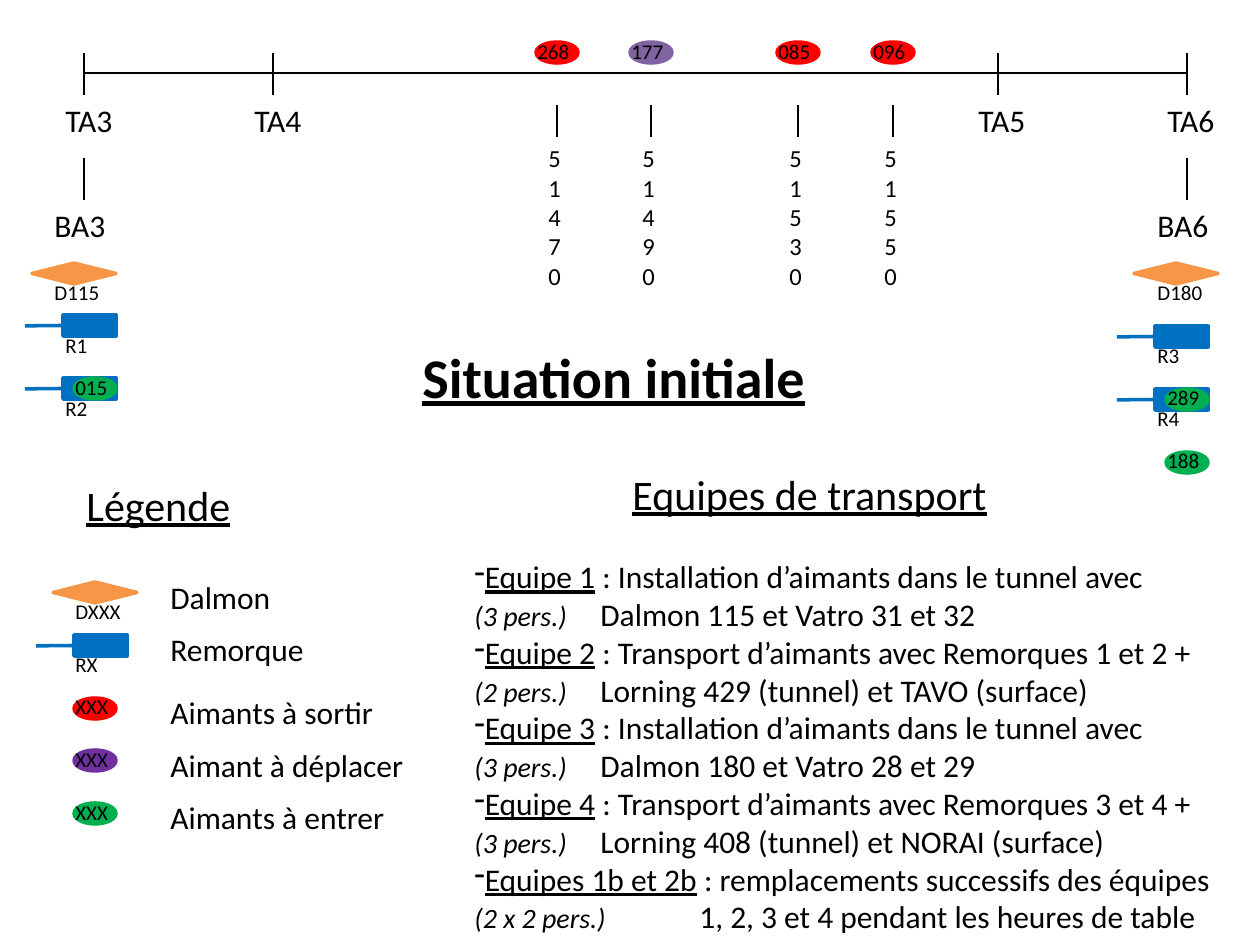
from lxml.etree import SubElement
from pptx import Presentation
from pptx.dml.color import RGBColor
from pptx.enum.shapes import MSO_CONNECTOR, MSO_SHAPE
from pptx.enum.text import MSO_AUTO_SIZE
from pptx.oxml.ns import qn
from pptx.util import Emu, Pt

SCALE = 914400 / 126
COLORS = {
    "black": "000000",
    "red": "FF0000",
    "green": "00B050",
    "violet": "7030A0",
    "mauve": "8064A2",
    "blue": "0070C0",
    "orange": "F79646",
}
LABEL_HEIGHTS = {12: 38, 14: 161, 18: 50, 24: 63, 32: 81}
SYMBOLS = {
    "magnet": (MSO_SHAPE.OVAL, 42),
    "tractor": (MSO_SHAPE.FLOWCHART_DECISION, 84),
    "trailer": (MSO_SHAPE.LINE_CALLOUT_1, 53),
}

deck = Presentation()
deck.slide_width = Emu(round(1260 * SCALE))
deck.slide_height = Emu(round(945 * SCALE))
page = deck.slides.add_slide(deck.slide_layouts[6])


def add_label(text, left, top, width, size, bold=False, underline=False):
    frame = [Emu(round(v * SCALE)) for v in (left, top, width, LABEL_HEIGHTS[size])]
    box = page.shapes.add_textbox(*frame)
    box.text_frame.word_wrap = True
    box.text_frame.auto_size = MSO_AUTO_SIZE.SHAPE_TO_FIT_TEXT
    box.text_frame.text = text
    font = box.text_frame.paragraphs[0].runs[0].font
    font.name = "Calibri"
    font.size = Pt(size)
    font.bold = bold
    font.underline = underline
    font.color.rgb = RGBColor.from_string(COLORS["black"])


def add_symbol(kind, color, left, top, text, text_left, text_top, text_width):
    preset, width = SYMBOLS[kind]
    frame = [Emu(round(v * SCALE)) for v in (left, top, width, 21)]
    shape = page.shapes.add_shape(preset, *frame)
    shape.shadow.inherit = False
    shape.fill.solid()
    shape.fill.fore_color.rgb = RGBColor.from_string(COLORS[color])
    shape.line.color.rgb = RGBColor.from_string(COLORS[color])
    shape.line.width = Pt(2)
    if kind == "trailer":
        for index, value in enumerate((0.5, -0.01, 0.52, -0.72)):
            shape.adjustments[index] = value
    add_label(text, text_left, text_top, text_width, 12)


magnets = [
    (557, "268", "51470", "red"),
    (651, "177", "51490", "mauve"),
    (798, "085", "51530", "red"),
    (893, "096", "51550", "red"),
]
stations = [(84, "TA3", 53), (273, "TA4", 242), (998, "TA5", 966), (1187, "TA6", 1155)]

lines = [(84, 73, 1187, 73)]
lines += [(x, 53, x, 95) for x, name, left in stations]
lines += [(x, 158, x, 200) for x in (84, 1187)]
lines += [(x, 105, x, 137) for x, number, place, color in magnets]
for ends in lines:
    line = page.shapes.add_connector(
        MSO_CONNECTOR.STRAIGHT, *[Emu(round(v * SCALE)) for v in ends]
    )
    line.line.color.rgb = RGBColor.from_string(COLORS["black"])
    line.line.width = Pt(1.5)
    SubElement(line._element.spPr, qn("a:effectLst"))

for x, name, left in stations:
    add_label(name, left, 95, 76, 18)
for name, left in (("BA3", 42), ("BA6", 1145)):
    add_label(name, left, 200, 84, 18)
for x, number, place, color in magnets:
    add_symbol("magnet", color, x - 21, 42, number, x - 32, 32, 63)
    add_label(place, x - 21, 137, 32, 14)

symbols = [
    ("tractor", "orange", 32, 263, "D115", 42, 273, 74),
    ("trailer", "blue", 63, 315, "R1", 53, 326, 53),
    ("trailer", "blue", 63, 378, "R2", 53, 389, 53),
    ("magnet", "green", 74, 378, "015", 63, 368, 63),
    ("tractor", "orange", 1134, 263, "D180", 1145, 273, 84),
    ("trailer", "blue", 1155, 326, "R3", 1145, 336, 53),
    ("trailer", "blue", 1155, 389, "R4", 1145, 399, 53),
    ("magnet", "green", 1166, 389, "289", 1155, 378, 63),
    ("magnet", "green", 1166, 452, "188", 1155, 441, 63),
    ("tractor", "orange", 53, 582, "DXXX", 63, 592, 74),
    ("trailer", "blue", 74, 635, "RX", 63, 645, 53),
    ("magnet", "red", 74, 698, "XXX", 63, 687, 63),
    ("magnet", "violet", 74, 750, "XXX", 63, 740, 63),
    ("magnet", "green", 74, 803, "XXX", 63, 793, 63),
]
for symbol in symbols:
    add_symbol(*symbol)

add_label("Situation initiale", 410, 336, 451, 32, bold=True, underline=True)
add_label("Légende", 74, 473, 284, 24, underline=True)
add_label("Equipes de transport", 620, 462, 420, 24, underline=True)
legend = [
    ("Dalmon", 572),
    ("Remorque", 624),
    ("Aimants à sortir", 687),
    ("Aimant à déplacer", 740),
    ("Aimants à entrer", 792),
]
for text, top in legend:
    add_label(text, 158, top, 305, 18)

teams = [
    ("Equipe 1", "Installation d’aimants dans le tunnel avec",
     "(3 pers.)", "Dalmon 115 et Vatro 31 et 32", 126),
    ("Equipe 2", "Transport d’aimants avec Remorques 1 et 2 +",
     "(2 pers.)", "Lorning 429 (tunnel) et TAVO (surface)", 126),
    ("Equipe 3", "Installation d’aimants dans le tunnel avec",
     "(3 pers.)", "Dalmon 180 et Vatro 28 et 29", 126),
    ("Equipe 4", "Transport d’aimants avec Remorques 3 et 4 +",
     "(3 pers.)", "Lorning 408 (tunnel) et NORAI (surface)", 126),
    ("Equipes 1b et 2b", "remplacements successifs des équipes",
     "(2 x 2 pers.)", "1, 2, 3 et 4 pendant les heures de table", 225),
]
box = page.shapes.add_textbox(*[Emu(round(v * SCALE)) for v in (462, 551, 777, 394)])
box.text_frame.word_wrap = True
box.text_frame.auto_size = MSO_AUTO_SIZE.SHAPE_TO_FIT_TEXT
para = box.text_frame.paragraphs[0]
for team, task, crew, vehicles, tab in teams:
    if para.runs:
        para = box.text_frame.add_paragraph()
    SubElement(para._p.get_or_add_pPr(), qn("a:buChar"), char="-")
    span = para.add_run()
    span.text = team
    span.font.underline = True
    para.add_run().text = f" : {task}"

    para = box.text_frame.add_paragraph()
    tabs = SubElement(para._p.get_or_add_pPr(), qn("a:tabLst"))
    SubElement(tabs, qn("a:tab"), pos=str(round(tab * SCALE)), algn="l")
    span = para.add_run()
    span.text = crew
    span.font.italic = True
    span.font.size = Pt(16)
    para.add_run().text = f"\t{vehicles}"

for para in box.text_frame.paragraphs:
    for span in para.runs:
        span.font.name = "Calibri"
        span.font.size = span.font.size or Pt(18)
        span.font.color.rgb = RGBColor.from_string(COLORS["black"])

deck.save("out.pptx")
